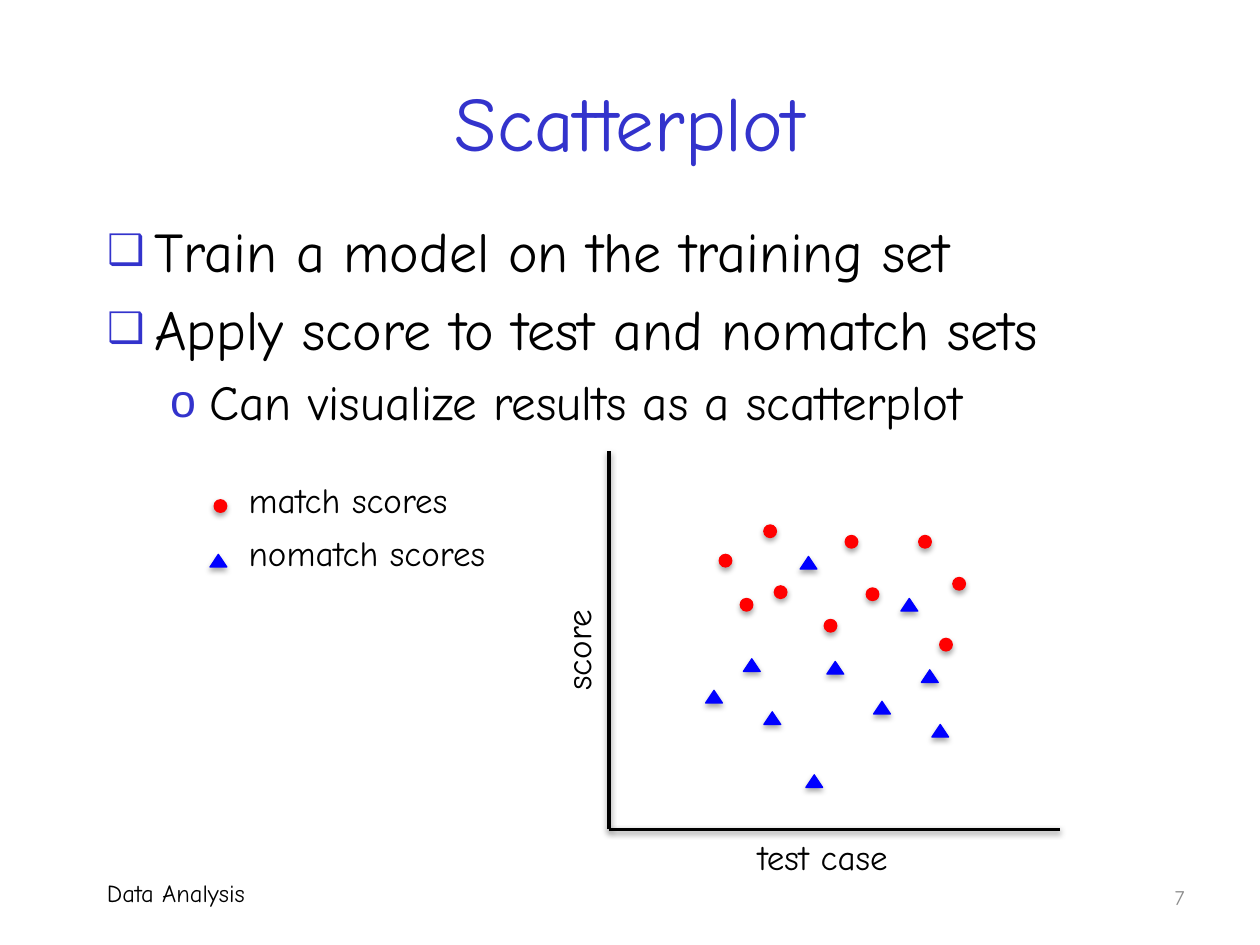
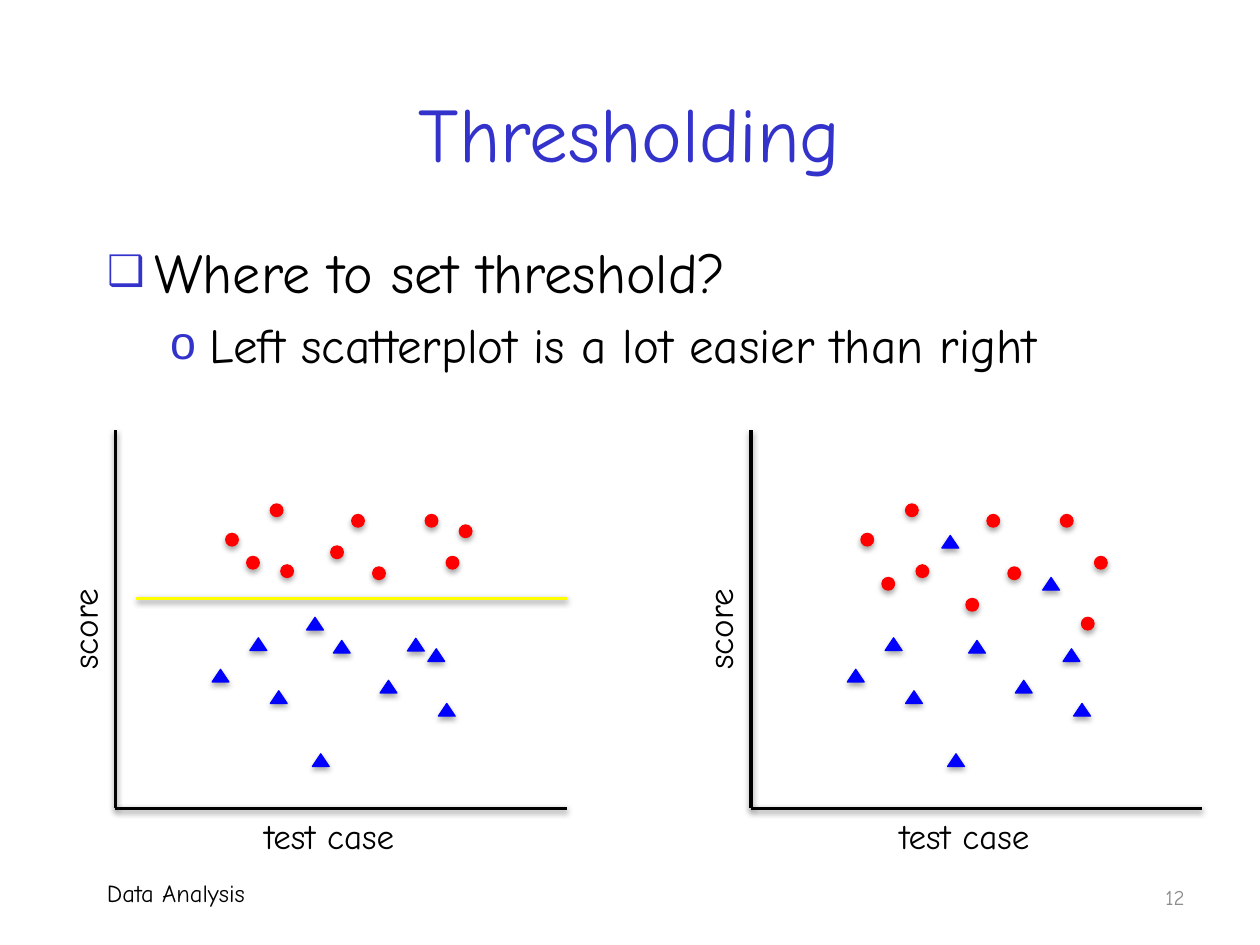
from lxml.etree import SubElement as Sub
from pptx import Presentation
from pptx.dml.color import RGBColor
from pptx.enum.shapes import MSO_CONNECTOR as Conn, MSO_SHAPE as Shape
from pptx.enum.text import MSO_ANCHOR as Anchor, MSO_AUTO_SIZE as Fit, PP_ALIGN as Align
from pptx.oxml.ns import qn
from pptx.util import Inches, Pt

FONT = "Comic Neue"
BLACK, GRAY, INDIGO = "000000", "8C8C8C", "3333CC"
RED, BLUE, YELLOW = "FF0000", "0000FF", "FFFF00"
UNIT = Inches(1) / 24
WIDE, TALL = 240, 180
PLOT_W, PLOT_H = 86, 72
BULLETS = (("❑", 75, 32), ("o", 95, 28))

DOTS = [(45, 16), (21, 19.6), (29.5, 14), (31.5, 25.6), (49, 26), (59, 16)]
CONES = [(18.4, 45.5), (25.6, 39.5), (29.5, 49.6), (41.5, 40), (50.4, 47.6),
         (59.5, 41.6), (37.5, 61.6), (61.5, 52)]
MIXED = (DOTS + [(25, 28), (41, 32), (65.5, 24), (63, 35.6)],
         CONES + [(36.4, 20), (55.6, 28)])
SPLIT = (DOTS + [(25, 24), (41, 22), (65.5, 18), (63, 24)],
         CONES + [(36.4, 35.6), (55.6, 39.6)])


def grid(*vals):
    """Turn grid units into slide lengths."""
    return [round(v * UNIT) for v in vals]


def tint(code):
    """Turn a hex string into a colour."""
    return RGBColor.from_string(code)


def write(para, text, size, color=BLACK):
    """Add one formatted run to a paragraph."""
    run = para.add_run()
    run.text = text
    run.font.name, run.font.size = FONT, Pt(size)
    run.font.color.rgb = tint(color)


def label(slide, box, text, size=20, color=BLACK, wrap=False):
    """Add a text box and return it."""
    item = slide.shapes.add_textbox(*grid(*box))
    item.text_frame.word_wrap = wrap
    write(item.text_frame.paragraphs[0], text, size, color)
    return item


def shade(item, alpha, dist):
    """Drop a soft shadow straight below a shape or line."""
    props = item._element.spPr
    fx = props.find(qn("a:effectLst"))
    if fx is None:
        fx = Sub(props, qn("a:effectLst"))
    cast = Sub(fx, qn("a:outerShdw"), blurRad="40000", dist=str(dist),
               dir="5400000", rotWithShape="0")
    black = Sub(cast, qn("a:srgbClr"), val=BLACK)
    Sub(black, qn("a:alpha"), val=str(alpha * 1000))


def rule(slide, ends, color=BLACK):
    """Draw a shadowed straight line."""
    line = slide.shapes.add_connector(Conn.STRAIGHT, *grid(*ends))
    line.line.color.rgb, line.line.width = tint(color), Pt(2)
    shade(line, 38, 20000)


def mark(slide, kind, x, y):
    """Draw a match dot or a nomatch triangle."""
    form, width, color = ((Shape.OVAL, 2.4, RED) if kind == "match"
                          else (Shape.ISOSCELES_TRIANGLE, 3.2, BLUE))
    item = slide.shapes.add_shape(form, *grid(x, y, width, 2.4))
    item.fill.solid()
    item.fill.fore_color.rgb = item.line.color.rgb = tint(color)
    item.line.width = Pt(0.75)
    item.shadow.inherit = False
    shade(item, 35, 23000)


def plot(slide, left, top, data, cut=None):
    """Draw axes, axis names, points and an optional threshold."""
    base, right = top + PLOT_H, left + PLOT_W
    rule(slide, (left, top, left, base))
    rule(slide, (left, base, right, base))
    label(slide, (left - 16.9, top + 31.6, 22, 10.6), "score").rotation = 270
    label(slide, (left + 26, base, 34, 10.6), "test case")
    for kind, spots in zip(("match", "nomatch"), data):
        for x, y in spots:
            mark(slide, kind, left + x, top + y)
    if cut is not None:
        rule(slide, (left + 4, top + cut, right, top + cut), YELLOW)


def legend(slide, left, top):
    """Explain the two kinds of point."""
    rows = (("match", 0.8, 5.2, 46.5), ("nomatch", 0, 5.6, 53.5))
    for i, (kind, dx, dy, width) in enumerate(rows):
        y = top + 10 * i
        mark(slide, kind, left + dx, y + dy)
        label(slide, (left + 5, y, width, 10.6), f"{kind} scores")


def place(item, box):
    """Move a placeholder and keep its text unscaled."""
    item.left, item.top, item.width, item.height = grid(*box)
    item.text_frame.auto_size = Fit.NONE
    return item.text_frame


def bullet(para, level, text):
    """Fill a list paragraph with its bullet and text."""
    sign, share, size = BULLETS[level]
    para.level = level
    props = para._p.get_or_add_pPr()
    Sub(Sub(props, qn("a:buClr")), qn("a:srgbClr"), val=INDIGO)
    Sub(props, qn("a:buSzPct"), val=str(share * 1000))
    Sub(props, qn("a:buChar"), char=sign)
    write(para, text, size)


def frame(deck, title, top, items, box, number):
    """Add a slide with title, list and footer."""
    slide = deck.slides.add_slide(deck.slide_layouts[1])
    head = place(slide.shapes.title, (18, top, 204, 30))
    head.vertical_anchor = Anchor.MIDDLE
    head.paragraphs[0].alignment = Align.CENTER
    write(head.paragraphs[0], title, 44, INDIGO)
    body = place(slide.placeholders[1], box)
    for i, (level, text) in enumerate(items):
        bullet(body.add_paragraph() if i else body.paragraphs[0], level, text)
    label(slide, (18, 166, 106, 10), "Data Analysis", 14, wrap=True)
    page = label(slide, (172, 166, 56, 9.6), number, 12, GRAY, True).text_frame
    page.vertical_anchor = Anchor.MIDDLE
    page.paragraphs[0].alignment = Align.RIGHT
    return slide


def main():
    """Build and save both slides."""
    deck = Presentation()
    deck.slide_width, deck.slide_height = grid(WIDE, TALL)
    one = frame(deck, "Scatterplot", 8,
                [(0, "Train a model on the training set"),
                 (0, "Apply score to test and nomatch sets"),
                 (1, "Can visualize results as a scatterplot")],
                (18, 40, 206, 44), "7")
    plot(one, 116, 86, MIXED)
    legend(one, 40, 90)
    two = frame(deck, "Thresholding", 10,
                [(0, "Where to set threshold?"),
                 (1, "Left scatterplot is a lot easier than right")],
                (18, 44, 210, 116), "12")
    plot(two, 143, 82, MIXED)
    plot(two, 22, 82, SPLIT, cut=32)
    deck.save("out.pptx")


if __name__ == "__main__":
    main()
